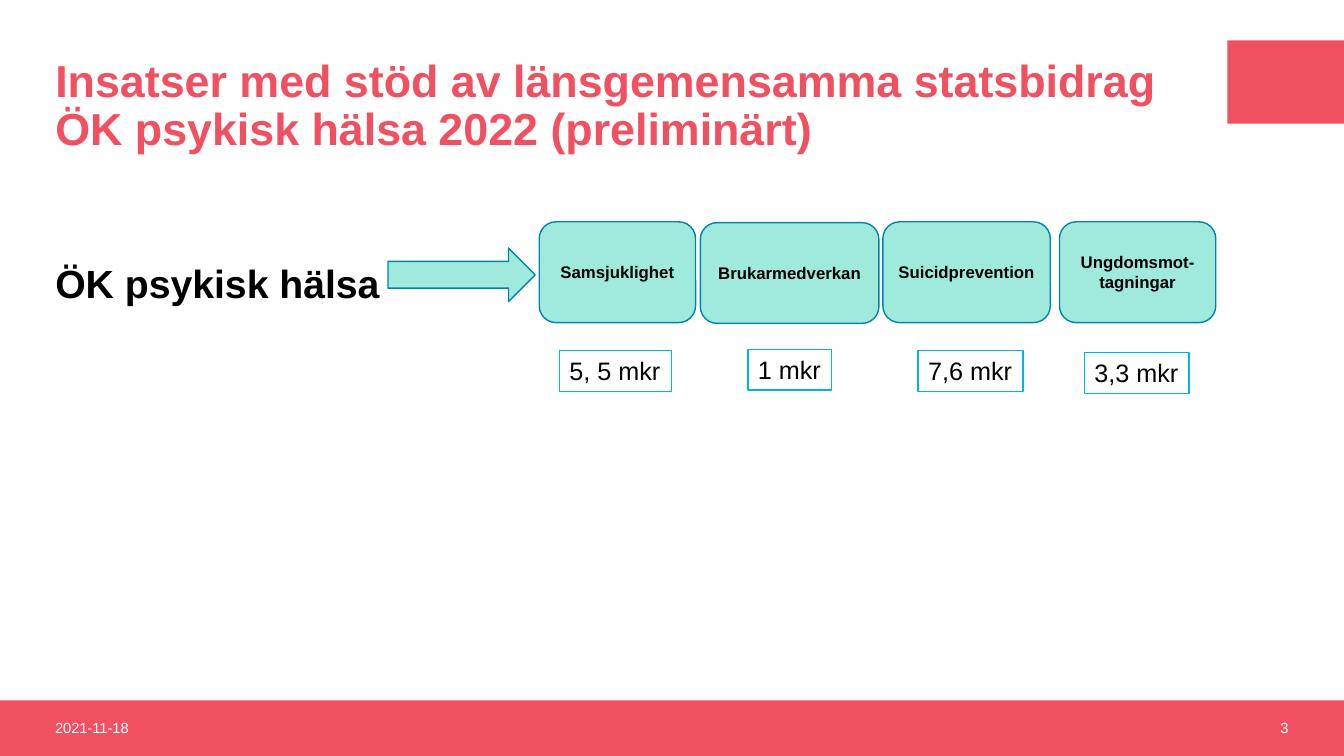
from pptx import Presentation
from pptx.dml.color import RGBColor
from pptx.enum.shapes import MSO_SHAPE
from pptx.enum.text import MSO_ANCHOR, MSO_AUTO_SIZE, PP_ALIGN
from pptx.oxml.xmlchemy import OxmlElement
from pptx.util import Cm, Pt

RECTANGLE = MSO_SHAPE.RECTANGLE
ROUNDED = MSO_SHAPE.ROUNDED_RECTANGLE
ARROW = MSO_SHAPE.RIGHT_ARROW
MIDDLE, TOP = MSO_ANCHOR.MIDDLE, MSO_ANCHOR.TOP
LEFT, CENTER, RIGHT = PP_ALIGN.LEFT, PP_ALIGN.CENTER, PP_ALIGN.RIGHT
NO_AUTOFIT, GROW = MSO_AUTO_SIZE.NONE, MSO_AUTO_SIZE.SHAPE_TO_FIT_TEXT

CORAL, MINT, TEAL, CYAN = "F15060", "A0EADD", "0085A9", "00B4E4"
BLACK, WHITE = "000000", "FFFFFF"
FONT = "Arial"
SLIDE_WIDTH, SLIDE_HEIGHT = 33.87, 19.05
MARGIN = 1.14
FOOTER_TOP, FOOTER_HEIGHT = 17.65, 1.4
AMOUNT_HEIGHT = 1.02

# label, left, top, width; then amount, left, top, width
AREAS = [
    (("Samsjuklighet", 13.59, 5.59, 3.94), ("5, 5 mkr", 14.1, 8.84, 2.82)),
    (("Brukarmedverkan", 17.65, 5.61, 4.5), ("1 mkr", 18.85, 8.81, 2.11)),
    (("Suicidprevention", 22.25, 5.59, 4.22), ("7,6 mkr", 23.14, 8.84, 2.64)),
    (("Ungdomsmot-tagningar", 26.7, 5.59, 3.94), ("3,3 mkr", 27.33, 8.89, 2.64)),
]


def color(hex_code):
    return RGBColor.from_string(hex_code)


class SlideBuilder:
    def __init__(self, presentation):
        self.slide = presentation.slides.add_slide(presentation.slide_layouts[1])

    def add_text(self, shape, text, size, text_color=BLACK, bold=False, align=LEFT,
                 anchor=MIDDLE, line_spacing=None):
        frame = shape.text_frame
        frame.word_wrap = True
        frame.auto_size = NO_AUTOFIT
        frame.vertical_anchor = anchor
        paragraph = frame.paragraphs[0]
        paragraph.alignment = align
        paragraph.space_before = Pt(0)
        if line_spacing:
            paragraph.line_spacing = line_spacing
        run = paragraph.add_run()
        run.text = text
        run.font.name = FONT
        run.font.size = Pt(size)
        run.font.bold = bold
        run.font.color.rgb = color(text_color)

    def placeholder(self, index, text, left, top, width, height, **style):
        shape = self.slide.placeholders[index]
        shape.left, shape.top = Cm(left), Cm(top)
        shape.width, shape.height = Cm(width), Cm(height)
        properties = shape.text_frame.paragraphs[0]._p.get_or_add_pPr()
        properties.set("marL", "0")
        properties.set("indent", "0")
        properties.append(OxmlElement("a:buNone"))
        self.add_text(shape, text, bold=True, line_spacing=0.9, **style)

    def shape(self, kind, left, top, width, height, fill, line=None):
        shape = self.slide.shapes.add_shape(
            kind, Cm(left), Cm(top), Cm(width), Cm(height))
        shape.shadow.inherit = False
        shape.fill.solid()
        shape.fill.fore_color.rgb = color(fill)
        if line:
            shape.line.color.rgb = color(line)
            shape.line.width = Pt(1)
        else:
            shape.line.fill.background()
        return shape

    def footer_text(self, text, left, align):
        box = self.slide.shapes.add_textbox(
            Cm(left), Cm(FOOTER_TOP), Cm(7.62), Cm(1.37))
        self.add_text(box, text, 10.5, WHITE, align=align)

    def area(self, label, left, top, width):
        box = self.shape(ROUNDED, left, top, width, 2.54, MINT, TEAL)
        box.text_frame.margin_left = box.text_frame.margin_right = Cm(0.2)
        self.add_text(box, label, 12, bold=True, align=CENTER)

    def amount(self, text, left, top, width):
        box = self.shape(RECTANGLE, left, top, width, AMOUNT_HEIGHT, WHITE, CYAN)
        self.add_text(box, text, 18, anchor=TOP)
        box.text_frame.word_wrap = False
        box.text_frame.auto_size = GROW


def main():
    presentation = Presentation()
    presentation.slide_width = Cm(SLIDE_WIDTH)
    presentation.slide_height = Cm(SLIDE_HEIGHT)
    builder = SlideBuilder(presentation)

    builder.shape(RECTANGLE, 0, FOOTER_TOP, SLIDE_WIDTH, FOOTER_HEIGHT, CORAL)
    builder.shape(RECTANGLE, 30.93, 1.02, 2.94, 2.1, CORAL)
    builder.placeholder(
        0, "Insatser med stöd av länsgemensamma statsbidrag "
        "ÖK psykisk hälsa 2022 (preliminärt)",
        MARGIN, 1.02, 29.49, 3.35, size=32, text_color=CORAL)
    builder.placeholder(1, "ÖK psykisk hälsa", MARGIN, 6.55, 31.6, 10.6,
                        size=28, anchor=TOP)
    builder.footer_text("2021-11-18", MARGIN, LEFT)
    builder.footer_text("3", 25.1, RIGHT)

    builder.shape(ARROW, 9.78, 6.25, 3.71, 1.35, MINT, TEAL)
    for area, amount in AREAS:
        builder.area(*area)
        builder.amount(*amount)

    presentation.save("out.pptx")


if __name__ == "__main__":
    main()
